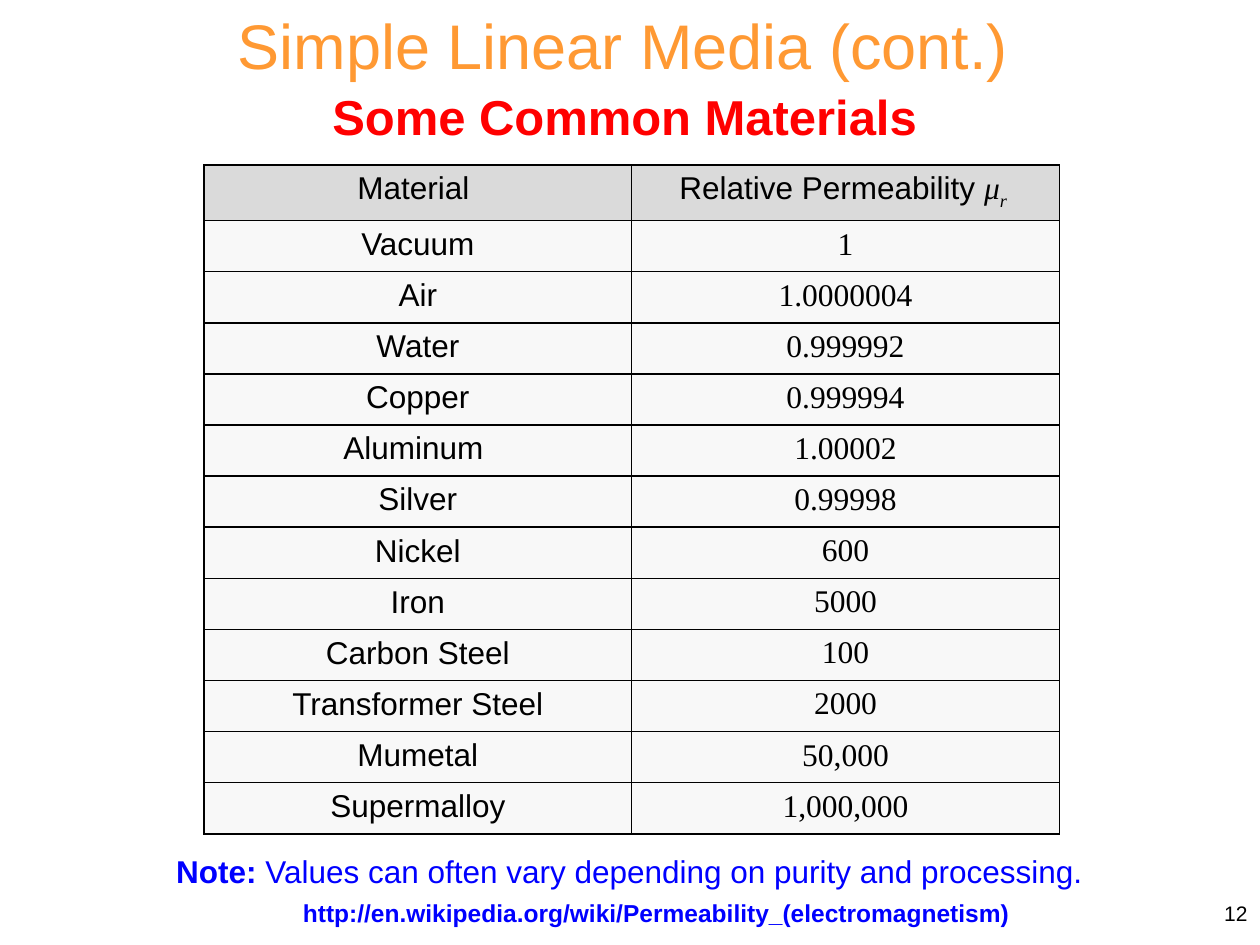
from lxml import etree
from pptx import Presentation
from pptx.dml.color import RGBColor
from pptx.enum.text import MSO_ANCHOR, PP_ALIGN
from pptx.oxml.ns import qn
from pptx.util import Pt

LEFT, CENTER, RIGHT = PP_ALIGN.LEFT, PP_ALIGN.CENTER, PP_ALIGN.RIGHT
TOP = MSO_ANCHOR.TOP
SANS, SERIF = "Arial", "Times New Roman"
COLORS = {
    "title": "FF9933",
    "subtitle": "FF0000",
    "note": "0000FF",
    "ink": "000000",
    "header": "DADADA",
    "body": "F8F8F8",
}
MATERIALS = [
    ("Vacuum", "1"),
    ("Air", "1.0000004"),
    ("Water", "0.999992"),
    ("Copper", "0.999994"),
    ("Aluminum ", "1.00002"),
    ("Silver", "0.99998"),
    ("Nickel", "600"),
    ("Iron", "5000"),
    ("Carbon Steel", "100"),
    ("Transformer Steel", "2000"),
    ("Mumetal", "50,000"),
    ("Supermalloy", "1,000,000"),
]


def rgb(name):
    return RGBColor.from_string(COLORS[name])


def add_run(paragraph, text, size, color="ink", face=SANS, bold=False, italic=False):
    run = paragraph.add_run()
    run.text = text
    font = run.font
    font.name, font.size, font.bold, font.italic = face, Pt(size), bold, italic
    font.color.rgb = rgb(color)
    return run


def add_line(slide, box, pieces, size, color, align=CENTER, wrap=True):
    frame = slide.shapes.add_textbox(*map(Pt, box)).text_frame
    frame.word_wrap = wrap
    frame.vertical_anchor = TOP
    paragraph = frame.paragraphs[0]
    paragraph.alignment = align
    for text, bold in pieces:
        add_run(paragraph, text, size, color, bold=bold)


def style_cell(cell, fill):
    properties = cell._tc.get_or_add_tcPr()
    for side in ("lnL", "lnR", "lnT", "lnB"):
        border = etree.SubElement(properties, qn(f"a:{side}"), w=str(Pt(1)))
        solid = etree.SubElement(border, qn("a:solidFill"))
        etree.SubElement(solid, qn("a:srgbClr"), val=COLORS["ink"])
    cell.fill.solid()
    cell.fill.fore_color.rgb = rgb(fill)
    paragraph = cell.text_frame.paragraphs[0]
    paragraph.alignment = CENTER
    return paragraph


def add_materials_table(slide, box):
    row_count = len(MATERIALS) + 1
    table = slide.shapes.add_table(row_count, 2, *map(Pt, box)).table
    for column in table.columns:
        column.width = Pt(box[2] / 2)
    for row in table.rows:
        row.height = Pt(box[3] / row_count)

    add_run(style_cell(table.cell(0, 0), "header"), "Material ", 18)
    permeability = style_cell(table.cell(0, 1), "header")
    add_run(permeability, "Relative Permeability ", 18)
    add_run(permeability, "μ", 18, face=SERIF, italic=True)
    subscript = add_run(permeability, "r ", 18, face=SERIF, italic=True)
    subscript.font._element.set("baseline", "-25000")

    for row, (material, value) in enumerate(MATERIALS, start=1):
        add_run(style_cell(table.cell(row, 0), "body"), material, 18)
        add_run(style_cell(table.cell(row, 1), "body"), value, 18, face=SERIF)


def add_headings(slide, box):
    left, top, width, height = box
    add_line(slide, (left, top, width, 50.4),
             [("Simple Linear Media (cont.)", False)], 36, "title")
    add_line(slide, (left + 167, top + 46.1, 352.8, height - 46.1),
             [("Some Common Materials", True)], 28, "subtitle", LEFT, False)


def add_footer(slide, box):
    left, top, width, height = box
    note = [("Note:", True),
            (" Values can often vary depending on purity and processing.", False)]
    add_line(slide, (left, top, 534.2, 28.8), note, 18, "note", LEFT, False)
    add_line(slide, (left + 31, top + 26.6, 501.1, 24.5),
             [("http://en.wikipedia.org/wiki/Permeability_(electromagnetism)", True)],
             14, "note")
    add_line(slide, (left + width - 167.8, top + height - 28.8, 167.8, 28.8),
             [("12", False)], 12, "ink", RIGHT)


def main():
    deck = Presentation()
    deck.slide_width, deck.slide_height = Pt(720), Pt(540)
    slide = deck.slides.add_slide(deck.slide_layouts[6])
    add_headings(slide, (15.8, 0, 680.4, 87.1))
    add_materials_table(slide, (116.6, 94.3, 488.8, 379.6))
    add_footer(slide, (93.6, 483.1, 626.4, 56.9))
    deck.save("out.pptx")


if __name__ == "__main__":
    main()
